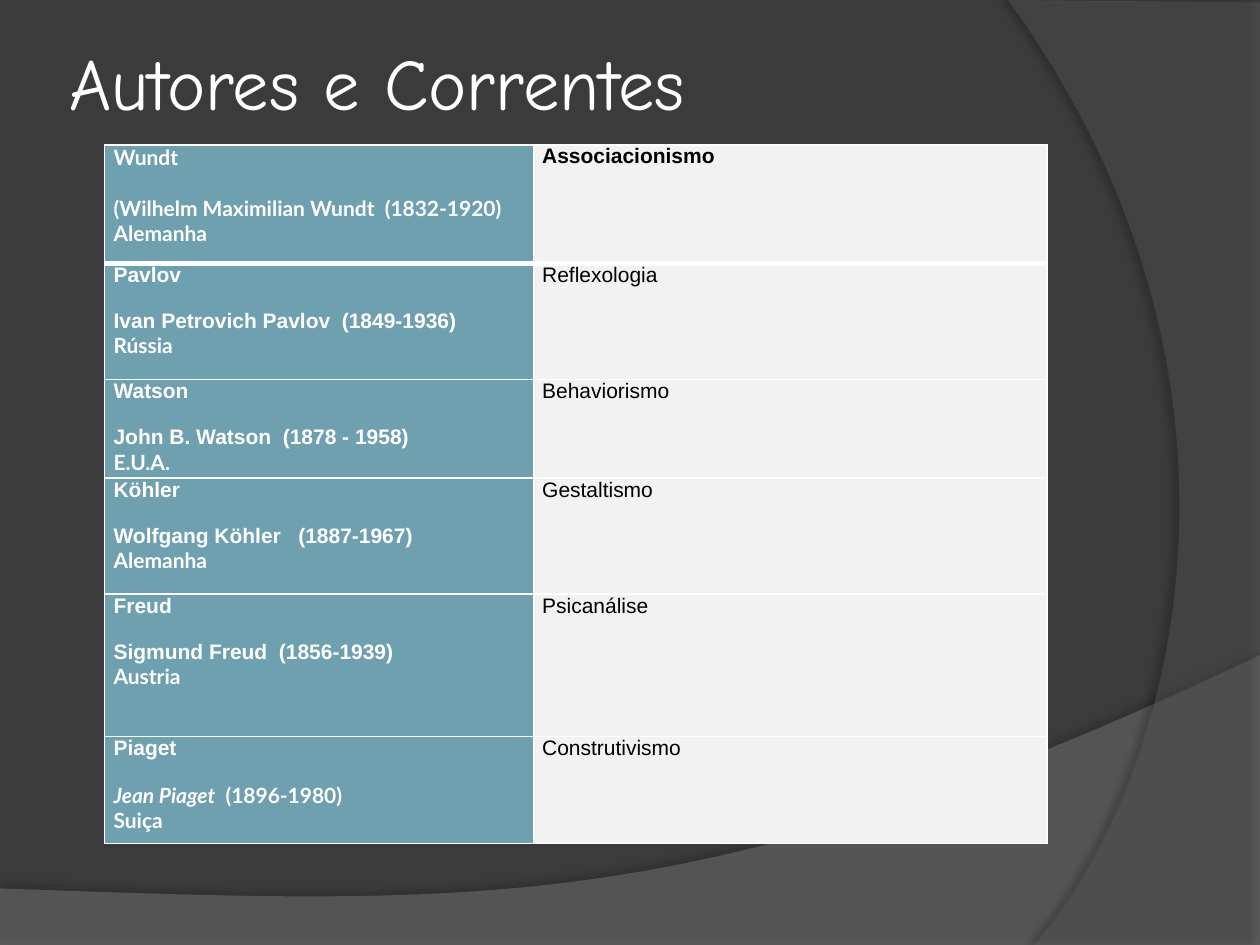
from lxml import etree
from pptx import Presentation
from pptx.dml.color import RGBColor
from pptx.enum import text
from pptx.oxml import ns
from pptx.util import Cm, Pt

COLORS = {
    "background": "3B3B3B", "wave": "7F7F7F", "arc": "5E5E5E", "shadow": "000000",
    "white": "FFFFFF", "black": "000000", "author": "6EA0B0", "school": "F2F2F2",
}
TITLE = "Autores e Correntes"
# short name, italic part, rest of the full name, country, school
AUTHORS = [
    ("Wundt", "", "(Wilhelm Maximilian Wundt  (1832-1920)", "Alemanha", "Associacionismo"),
    ("Pavlov", "", "Ivan Petrovich Pavlov  (1849-1936)", "Rússia", "Reflexologia"),
    ("Watson", "", "John B. Watson  (1878 - 1958)", "E.U.A.", "Behaviorismo"),
    ("Köhler", "", "Wolfgang Köhler   (1887-1967)", "Alemanha", "Gestaltismo"),
    ("Freud", "", "Sigmund Freud  (1856-1939)", "Austria", "Psicanálise"),
    ("Piaget", "Jean Piaget", "  (1896-1980)", "Suiça", "Construtivismo"),
]
COLUMN_WIDTHS = [8.64, 10.36]
ROW_HEIGHTS = [2.39, 2.34, 1.91, 2.34, 2.87, 2.16]

# Straight corners, then the Bezier curve that starts at the last corner (cm)
DECORATIONS = [
    {"color": "wave", "opacity": 45, "shadow": (35, 3.5, 270),
     "corners": [(0, 17.91), (0, 19.05), (25.4, 19.05), (25.4, 13.21)],
     "curve": [(14.2, 18.52), (9.93, 18.26), (0, 17.91)]},
    {"color": "arc", "opacity": 40, "shadow": (45, 4, 180),
     "corners": [(25.4, 0.05), (25.4, 19.05), (20.85, 19.05)],
     "curve": [(23.75, 15.72), (25.86, 7.62), (20.32, 0)]},
]


def rgb(name):
    return RGBColor.from_string(COLORS[name])


def add_child(parent, tag, **attributes):
    return etree.SubElement(parent, ns.qn(tag), {k: str(v) for k, v in attributes.items()})


def bezier(points, steps=60):
    for step in range(1, steps + 1):
        t = step / steps
        weights = [(1 - t) ** 3, 3 * t * (1 - t) ** 2, 3 * t * t * (1 - t), t ** 3]
        yield tuple(sum(w * p[axis] for w, p in zip(weights, points)) for axis in (0, 1))


def add_decoration(page, color, opacity, shadow, corners, curve):
    outline = corners + list(bezier([corners[-1], *curve]))
    points = [(Cm(x), Cm(y)) for x, y in outline]
    builder = page.shapes.build_freeform(*points[0])
    builder.add_line_segments(points[1:], close=True)
    shape = builder.convert_to_shape()
    shape.line.fill.background()
    shape.fill.solid()
    shape.fill.fore_color.rgb = rgb(color)
    fill_color = shape._element.spPr.find(".//" + ns.qn("a:srgbClr"))
    add_child(fill_color, "a:alpha", val=opacity * 1000)

    shape.shadow.inherit = False
    shadow_opacity, distance, angle = shadow
    effects = shape._element.spPr.find(ns.qn("a:effectLst"))
    outer = add_child(effects, "a:outerShdw", blurRad=Pt(4), dist=Pt(distance),
                      dir=angle * 60000, algn="ctr", rotWithShape=0)
    shadow_color = add_child(outer, "a:srgbClr", val=COLORS["shadow"])
    add_child(shadow_color, "a:alpha", val=shadow_opacity * 1000)


def format_span(span, font, size, color, bold=False, italic=False):
    span.font.name = font
    span.font.size = Pt(size)
    span.font.color.rgb = rgb(color)
    span.font.bold = bold
    span.font.italic = italic


def add_title(page):
    box = page.shapes.add_textbox(Cm(1.27), Cm(0.76), Cm(20.75), Cm(1.75))
    frame = box.text_frame
    frame.word_wrap = True
    frame.vertical_anchor = text.MSO_ANCHOR.MIDDLE
    frame.margin_left = frame.margin_right = Cm(0.13)
    frame.margin_top = frame.margin_bottom = Cm(0.13)
    frame.text = TITLE
    format_span(frame.paragraphs[0].runs[0], "Comic Neue", 41.4, "white")


def style_cell(cell, fill, bottom_width):
    cell.margin_left = cell.margin_right = Cm(0.18)
    cell.margin_top = cell.margin_bottom = 0
    properties = cell._tc.get_or_add_tcPr()
    for side, width in zip("LRTB", (1, 1, 1, bottom_width)):
        border = add_child(properties, f"a:ln{side}", w=Pt(width))
        add_child(add_child(border, "a:solidFill"), "a:srgbClr", val=COLORS["white"])
    cell.fill.solid()
    cell.fill.fore_color.rgb = rgb(fill)


def fill_author(cell, name, italic_part, rest, country, first):
    name_font = "Lato" if first else "Arial"
    full_name_font = "Lato" if first or italic_part else "Arial"
    lines = [
        (name_font, [(name, False)]),
        (full_name_font, [(italic_part, True), (rest, False)]),
        ("Lato", [(country, False)]),
    ]
    frame = cell.text_frame
    for index, (font, parts) in enumerate(lines):
        para = frame.add_paragraph() if index else frame.paragraphs[0]
        para.alignment = text.PP_ALIGN.JUSTIFY
        if index == 1:
            para.space_before = Pt(14.4 if first else 13)
        for words, italic in parts:
            if words:
                span = para.add_run()
                span.text = words
                format_span(span, font, 12, "white", bold=True, italic=italic)


def add_authors_table(page):
    table = page.shapes.add_table(
        len(AUTHORS), 2, Cm(2.11), Cm(2.92),
        Cm(sum(COLUMN_WIDTHS)), Cm(sum(ROW_HEIGHTS))).table
    table.first_row = table.horz_banding = False
    for column, width in zip(table.columns, COLUMN_WIDTHS):
        column.width = Cm(width)
    for index, (*author, school) in enumerate(AUTHORS):
        first = index == 0
        table.rows[index].height = Cm(ROW_HEIGHTS[index])
        author_cell, school_cell = table.cell(index, 0), table.cell(index, 1)
        style_cell(author_cell, "author", 3 if first else 1)
        style_cell(school_cell, "school", 3 if first else 1)
        fill_author(author_cell, *author, first)
        school_cell.text_frame.text = school
        para = school_cell.text_frame.paragraphs[0]
        para.alignment = text.PP_ALIGN.JUSTIFY
        format_span(para.runs[0], "Arial", 12, "black", bold=first)


def main():
    deck = Presentation()
    deck.slide_width, deck.slide_height = Cm(25.4), Cm(19.05)
    page = deck.slides.add_slide(deck.slide_layouts[6])
    page.background.fill.solid()
    page.background.fill.fore_color.rgb = rgb("background")
    for decoration in DECORATIONS:
        add_decoration(page, **decoration)
    add_title(page)
    add_authors_table(page)
    deck.save("out.pptx")


if __name__ == "__main__":
    main()
